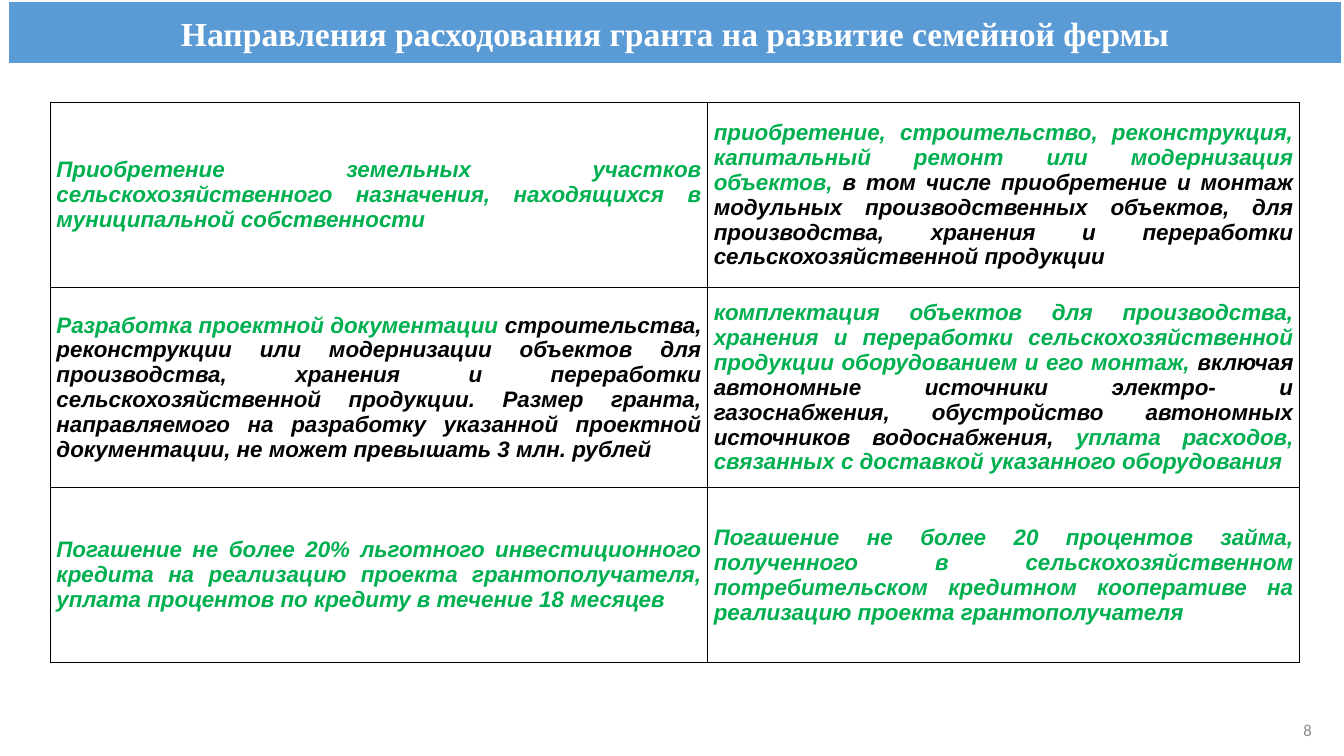
from lxml import etree
from pptx import Presentation
from pptx.dml.color import RGBColor
from pptx.enum.text import MSO_ANCHOR, PP_ALIGN
from pptx.oxml.ns import qn
from pptx.util import Inches, Pt

MIDDLE = MSO_ANCHOR.MIDDLE
CENTER, RIGHT, JUSTIFY = PP_ALIGN.CENTER, PP_ALIGN.RIGHT, PP_ALIGN.JUSTIFY

WHITE = RGBColor(0xFF, 0xFF, 0xFF)
BLACK = RGBColor(0x00, 0x00, 0x00)
BLUE = RGBColor(0x5B, 0x9B, 0xD5)
GREEN = RGBColor(0x00, 0xB0, 0x50)
GRAY = RGBColor(0x8C, 0x8C, 0x8C)

TITLE = "Направления расходования гранта на развитие семейной фермы"
PAGE_NUMBER = "8"

# Each cell is a list of (text, colour) spans.
DIRECTIONS = [
    [
        [("Приобретение земельных участков сельскохозяйственного назначения, "
          "находящихся в муниципальной собственности", GREEN)],
        [("приобретение, строительство, реконструкция, капитальный ремонт "
          "или модернизация объектов, ", GREEN),
         ("в том числе приобретение и монтаж модульных производственных "
          "объектов, для производства, хранения и переработки "
          "сельскохозяйственной продукции", BLACK)],
    ],
    [
        [("Разработка проектной документации ", GREEN),
         ("строительства, реконструкции или модернизации объектов для "
          "производства, хранения и переработки сельскохозяйственной "
          "продукции. Размер гранта, направляемого на разработку указанной "
          "проектной документации, не может превышать 3 млн. рублей", BLACK)],
        [("комплектация объектов для производства, хранения и переработки "
          "сельскохозяйственной продукции оборудованием и его монтаж,", GREEN),
         (" включая автономные источники электро- и газоснабжения, "
          "обустройство автономных источников водоснабжения, ", BLACK),
         ("уплата расходов, связанных с доставкой указанного оборудования", GREEN)],
    ],
    [
        [("Погашение не более 20% льготного инвестиционного кредита на "
          "реализацию проекта грантополучателя, уплата процентов по кредиту "
          "в течение 18 месяцев", GREEN)],
        [("Погашение не более 20 процентов займа, полученного в "
          "сельскохозяйственном потребительском кредитном кооперативе на "
          "реализацию проекта грантополучателя", GREEN)],
    ],
]

SLIDE_SIZE = (13.33, 7.5)
TITLE_BOX = (0.08, 0.01, 13.23, 0.63)
TABLE_CORNER = (0.5, 1.02)
COLUMN_WIDTHS = (6.52, 5.87)
ROW_HEIGHTS = (1.83, 1.99, 1.73)
NUMBER_BOX = (10.11, 7.04, 3, 0.4)
CELL_MARGIN = 0.06


def inches(values):
    return [Inches(value) for value in values]


def write_line(frame, text, alignment, font_name, size, color, bold=False):
    frame.word_wrap = True
    frame.vertical_anchor = MIDDLE
    para = frame.paragraphs[0]
    para.text = text
    para.alignment = alignment
    font = para.font
    font.name, font.size, font.bold = font_name, Pt(size), bold
    font.color.rgb = color


def add_title(page):
    """Turn the title placeholder into a rounded banner."""
    banner = page.shapes.title
    banner.left, banner.top, banner.width, banner.height = inches(TITLE_BOX)
    geometry = etree.SubElement(banner.element.spPr, qn("a:prstGeom"), prst="roundRect")
    etree.SubElement(geometry, qn("a:avLst"))
    banner.fill.solid()
    banner.fill.fore_color.rgb = BLUE
    banner.line.color.rgb = WHITE
    banner.line.width = Pt(1.5)
    write_line(banner.text_frame, TITLE, CENTER, "Times New Roman", 24, WHITE, True)


def add_borders(cell):
    properties = cell._tc.get_or_add_tcPr()
    for position, side in enumerate(("lnL", "lnR", "lnT", "lnB")):
        border = etree.Element(qn(f"a:{side}"), w=str(Pt(1)))
        fill = etree.SubElement(border, qn("a:solidFill"))
        etree.SubElement(fill, qn("a:srgbClr"), val=str(BLACK))
        properties.insert(position, border)


def fill_cell(cell, spans):
    cell.fill.background()
    cell.vertical_anchor = MIDDLE
    cell.margin_left = cell.margin_right = Inches(CELL_MARGIN)
    cell.margin_top = cell.margin_bottom = 0
    para = cell.text_frame.paragraphs[0]
    para.alignment = JUSTIFY
    para.space_before = Pt(11)
    font = para.font
    font.name, font.size, font.bold, font.italic = "Arial", Pt(16), True, True
    for text, color in spans:
        span = para.add_run()
        span.text = text
        span.font.color.rgb = color
    add_borders(cell)


def add_directions(page):
    size = (sum(COLUMN_WIDTHS), sum(ROW_HEIGHTS))
    table = page.shapes.add_table(
        len(ROW_HEIGHTS), len(COLUMN_WIDTHS), *inches(TABLE_CORNER + size)).table
    table.first_row = table.horz_banding = False
    for column, width in zip(table.columns, COLUMN_WIDTHS):
        column.width = Inches(width)
    for row, height, contents in zip(table.rows, ROW_HEIGHTS, DIRECTIONS):
        row.height = Inches(height)
        for cell, spans in zip(row.cells, contents):
            fill_cell(cell, spans)


def main():
    deck = Presentation()
    deck.slide_width, deck.slide_height = inches(SLIDE_SIZE)
    page = deck.slides.add_slide(deck.slide_layouts[5])
    add_title(page)
    add_directions(page)
    number = page.shapes.add_textbox(*inches(NUMBER_BOX))
    write_line(number.text_frame, PAGE_NUMBER, RIGHT, "Calibri", 12, GRAY)
    deck.save("out.pptx")


if __name__ == "__main__":
    main()
